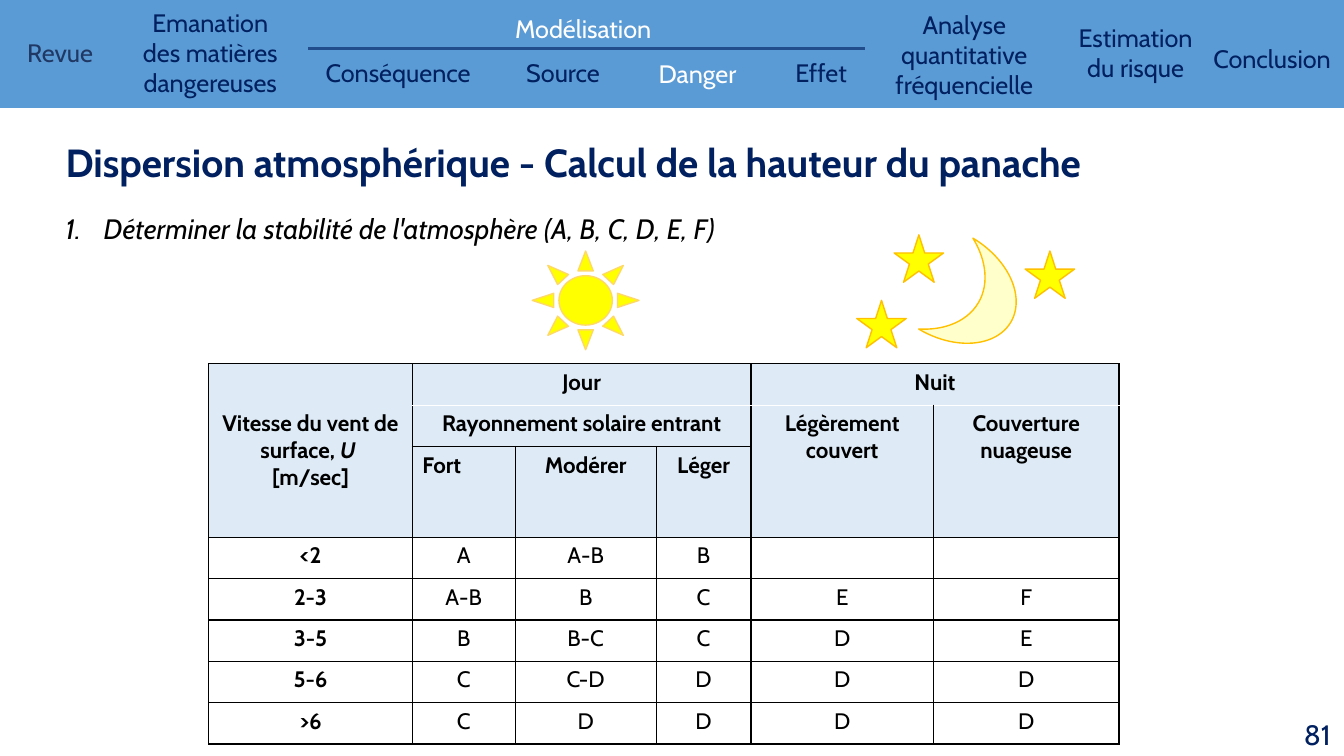
from lxml.etree import SubElement
from pptx import Presentation
from pptx.dml.color import RGBColor
from pptx.enum.shapes import MSO_CONNECTOR, MSO_SHAPE as SHAPE
from pptx.enum.text import MSO_ANCHOR as ANCHOR, PP_ALIGN as ALIGN
from pptx.oxml import parse_xml
from pptx.oxml.ns import nsdecls, qn
from pptx.util import Inches, Pt

WIDTH, HEIGHT = Inches(13.33), Inches(7.5)
COL, ROW = WIDTH / 100, HEIGHT / 100
NAVY, WHITE, BLACK = "002060", "FFFFFF", "000000"
GOLD, YELLOW, PALE = "FFC000", "FFFF00", "DEEBF7"

TABS = [
    ("Revue", (1.28, 4.27, 8.33, 5.33), "203864", ALIGN.LEFT),
    ("Emanation des matières dangereuses", (9.53, 0.27, 12.23, 13.33), NAVY, ALIGN.CENTER),
    ("Modélisation", (22.95, 1.07, 40.88, 5.33), WHITE, ALIGN.CENTER),
    ("Conséquence", (22.95, 6.93, 13.35, 5.33), NAVY, ALIGN.CENTER),
    ("Source", (34.43, 6.93, 14.93, 5.33), NAVY, ALIGN.CENTER),
    ("Danger", (45.75, 7.07, 12.3, 5.07), WHITE, ALIGN.CENTER),
    ("Effet", (54.53, 6.93, 13.13, 5.2), NAVY, ALIGN.CENTER),
    ("Analyse quantitative fréquencielle", (65.18, 0.53, 13.13, 12.8), NAVY, ALIGN.CENTER),
    ("Estimation\ndu risque", (77.93, 2.27, 13.13, 9.2), NAVY, ALIGN.CENTER),
    ("Conclusion", (88.8, 5.07, 11.7, 5.73), NAVY, ALIGN.CENTER),
]
COLUMNS = [15.15, 7.65, 10.5, 7.05, 13.58, 13.8]
STABILITY = [
    ["Vitesse du vent de surface, *U *\n[m/sec]", "Jour", "", "", "Nuit", ""],
    ["", "Rayonnement solaire entrant", "", "", "Légèrement couvert", "Couverture nuageuse"],
    ["", "Fort", "Modérer", "Léger", "", ""],
    ["<2", "A", "A-B", "B", "", ""],
    ["2-3", "A-B", "B", "C", "E", "F"],
    ["3-5", "B", "B-C", "C", "D", "E"],
    ["5-6", "C", "C-D", "D", "D", "D"],
    [">6", "C", "D", "D", "D", "D"],
]
HEADER_ROWS = 3
MERGES = [((0, 0), (2, 0)), ((0, 1), (0, 3)), ((0, 4), (0, 5)),
          ((1, 1), (1, 3)), ((1, 4), (2, 4)), ((1, 5), (2, 5))]
STARS = [(26.93, 0), (36.68, 2.13), (24.15, 8.67)]


def rgb(color):
    return RGBColor.from_string(color)


def place(box, x, y, w, h):
    return (round((box[0] + x) * COL), round((box[1] + y) * ROW),
            round(w * COL), round(h * ROW))


def write(tf, text, size=18, color=NAVY, bold=False, italic=False,
          align=ALIGN.LEFT, anchor=None):
    tf.word_wrap = True
    if anchor is not None:
        tf.vertical_anchor = anchor
    for i, line in enumerate(text.split("\n")):
        p = tf.add_paragraph() if i else tf.paragraphs[0]
        p.alignment = align
        p.line_spacing = 1.0
        for j, part in enumerate(line.split("*")):
            if part:
                r = p.add_run()
                r.text = part
                r.font.name = "Cabin"
                r.font.size = Pt(size)
                r.font.bold = bold
                r.font.italic = italic or j % 2 == 1
                r.font.color.rgb = rgb(color)


def add_text(s, area, text, **fmt):
    tf = s.shapes.add_textbox(*area).text_frame
    write(tf, text, **fmt)
    return tf


def add_filled(s, kind, area, fill, line=None):
    sp = s.shapes.add_shape(kind, *area)
    sp.shadow.inherit = False
    sp.fill.solid()
    sp.fill.fore_color.rgb = rgb(fill)
    if line:
        sp.line.color.rgb = rgb(line)
        sp.line.width = Pt(1)
    else:
        sp.line.fill.background()
    return sp


def add_header(s, box):
    add_filled(s, SHAPE.RECTANGLE, place(box, 0, 0, *box[2:]), "5B9BD5")
    for text, area, color, align in TABS:
        add_text(s, place(box, *area), text, color=color, align=align)
    x, y, w, h = place(box, 22.95, 6.4, 41.4, 0)
    rule = s.shapes.add_connector(MSO_CONNECTOR.STRAIGHT, x, y, x + w, y + h)
    rule.line.color.rgb = rgb("224D8C")
    rule.line.width = Pt(2.25)
    SubElement(rule._element.spPr, qn("a:effectLst"))


def add_heading(s, box):
    title = s.shapes.title
    title.left, title.top, title.width, title.height = place(box, 0, 0, box[2], 8)
    write(title.text_frame, "Dispersion atmosphérique - Calcul de la hauteur du panache",
          size=28, bold=True, anchor=ANCHOR.TOP)
    tf = add_text(s, place(box, 0, 9.73, 61.88, 5.87),
                  "Déterminer la stabilité de l'atmosphère (A, B, C, D, E, F)",
                  size=20, color=BLACK, italic=True)
    pPr = tf.paragraphs[0]._p.get_or_add_pPr()
    indent = Inches(0.38)
    pPr.set("marL", str(indent))
    pPr.set("indent", str(-indent))
    SubElement(pPr, qn("a:buFont"), typeface="+mj-lt")
    SubElement(pPr, qn("a:buAutoNum"), type="arabicPeriod")


def set_borders(cell, **colors):
    tcPr = cell._tc.get_or_add_tcPr()
    for i, side in enumerate("LRTB"):
        tcPr.insert(i, parse_xml(
            f'<a:ln{side} {nsdecls("a")} w="{Pt(1)}"><a:solidFill>'
            f'<a:srgbClr val="{colors.get(side, BLACK)}"/></a:solidFill></a:ln{side}>'))


def add_stability_table(s, box):
    area = place(box, 0, 0, *box[2:])
    table = s.shapes.add_table(len(STABILITY), len(COLUMNS), *area).table
    table.first_row = table.horz_banding = False
    for column, width in zip(table.columns, COLUMNS):
        column.width = round(width * COL)
    for row in table.rows:
        row.height = round(box[3] / len(STABILITY) * ROW)
    for start, end in MERGES:
        table.cell(*start).merge(table.cell(*end))
    for i, values in enumerate(STABILITY):
        for j, text in enumerate(values):
            cell = table.cell(i, j)
            header = i < HEADER_ROWS
            if header:
                cell.fill.solid()
                cell.fill.fore_color.rgb = rgb(PALE)
            else:
                cell.fill.background()
            white_side = {0: "B", 1: "T"}.get(i) if j else None
            set_borders(cell, **({white_side: WHITE} if white_side else {}))
            if text:
                write(cell.text_frame, text, size=16, color=BLACK, bold=header or j == 0,
                      align=ALIGN.LEFT if text == "Fort" else ALIGN.CENTER)
    table.cell(0, 0).vertical_anchor = ANCHOR.MIDDLE


def add_sky(s, box):
    add_filled(s, SHAPE.SUN, place(box, 0, 2.13, 7.95, 13.07), YELLOW, "FFD966")
    moon = add_filled(s, SHAPE.MOON, place(box, 30.38, 2, 5.63, 14), "FFFFCC", GOLD)
    moon.rotation = 30.8
    moon._element.spPr.xfrm.set("flipH", "1")
    for x, y in STARS:
        add_filled(s, SHAPE.STAR_5_POINT, place(box, x, y, 3.68, 6.27), YELLOW, GOLD)


def add_page_number(s, box):
    add_text(s, place(box, 0, 0, *box[2:]), "81", size=20,
             align=ALIGN.RIGHT, anchor=ANCHOR.MIDDLE)


def main():
    prs = Presentation()
    prs.slide_width, prs.slide_height = WIDTH, HEIGHT
    s = prs.slides.add_slide(prs.slide_layouts[5])
    add_header(s, (0, 0, 100, 14.27))
    add_page_number(s, (76.43, 94.4, 23.33, 5.33))
    add_heading(s, (4.13, 17.6, 95.63, 15.6))
    add_stability_table(s, (15.53, 48.13, sum(COLUMNS), 43.76))
    add_sky(s, (39.6, 31.07, 40.36, 16))
    prs.save("out.pptx")


if __name__ == "__main__":
    main()
